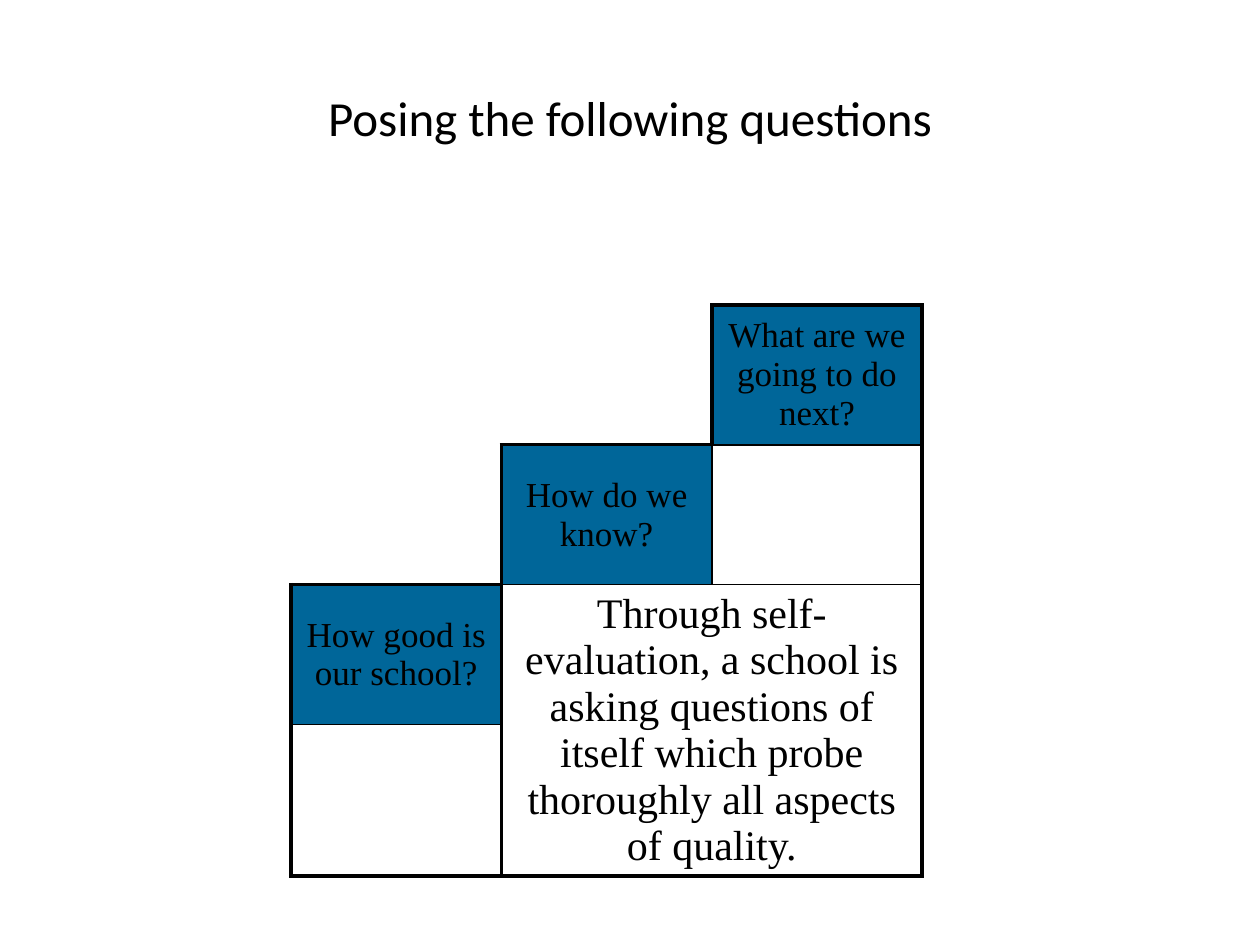
from lxml.etree import SubElement
from pptx import Presentation
from pptx.dml.color import RGBColor
from pptx.enum.text import MSO_ANCHOR, PP_ALIGN
from pptx.oxml.ns import qn
from pptx.util import Inches, Pt

HUES = {"ink": "000000", "step": "006699"}
TITLE = "Posing the following questions"
STEPS = {
    (0, 2): "What are we going to do next?",
    (1, 1): "How do we know?",
    (2, 0): "How good is our school?",
}
ANSWER = (
    "Through self-evaluation, a school is asking questions of itself "
    "which probe thoroughly all aspects of quality."
)
ROWS, COLS = 4, 3
WIDE, HIGH = 1.67, 1.11
THICK, THIN = 2.25, 1
UPRIGHT = [
    [0, 0, THICK, THICK],
    [0, THICK, THIN, THICK],
    [THICK, THICK, 0, THICK],
    [THICK, THICK, 0, THICK],
]
LEVEL = [
    [0, 0, THICK],
    [0, THICK, THIN],
    [THICK, THIN, THIN],
    [THIN, 0, 0],
    [THICK, THICK, THICK],
]


def color(name):
    return RGBColor.from_string(HUES[name])


def style(par, size, face):
    par.alignment = PP_ALIGN.CENTER
    par.font.size = Pt(size)
    par.font.name = face
    par.font.color.rgb = color("ink")


def write(cell, text, size):
    cell.text = text
    cell.vertical_anchor = MSO_ANCHOR.MIDDLE
    cell.margin_left = cell.margin_right = Inches(0.07)
    cell.margin_top = cell.margin_bottom = Inches(0.05)
    style(cell.text_frame.paragraphs[0], size, "Times New Roman")


def border(cell, row, col):
    origin = cell.is_merge_origin
    right = col + (cell.span_width if origin else 1)
    below = row + (cell.span_height if origin else 1)
    sides = {
        "L": UPRIGHT[row][col],
        "R": UPRIGHT[row][right],
        "T": LEVEL[row][col],
        "B": LEVEL[below][col],
    }
    props = cell._tc.get_or_add_tcPr()
    for spot, (side, weight) in enumerate(sides.items()):
        line = SubElement(props, qn(f"a:ln{side}"), w=str(Pt(weight)))
        if weight:
            fill = SubElement(line, qn("a:solidFill"))
            SubElement(fill, qn("a:srgbClr"), val=HUES["ink"])
        else:
            SubElement(line, qn("a:noFill"))
        props.insert(spot, line)


def main():
    """Build the slide with its staircase of questions."""
    deck = Presentation()
    deck.slide_width, deck.slide_height = Inches(10), Inches(7.5)
    slide = deck.slides.add_slide(deck.slide_layouts[5])

    title = slide.shapes.title
    title.left, title.top = Inches(0.5), Inches(0.3)
    title.width, title.height = Inches(9), Inches(1.25)
    title.text_frame.text = TITLE
    title.text_frame.vertical_anchor = MSO_ANCHOR.MIDDLE
    style(title.text_frame.paragraphs[0], 28, "Calibri")

    table = slide.shapes.add_table(
        ROWS, COLS, Inches(2.31), Inches(2.42),
        Inches(COLS * WIDE), Inches(ROWS * HIGH),
    ).table
    table.first_row = table.horz_banding = False
    table.cell(2, 1).merge(table.cell(3, 2))
    write(table.cell(2, 1), ANSWER, 24)

    for row in range(ROWS):
        for col in range(COLS):
            cell = table.cell(row, col)
            if (row, col) in STEPS:
                write(cell, STEPS[row, col], 20)
                cell.fill.solid()
                cell.fill.fore_color.rgb = color("step")
            else:
                cell.fill.background()
            border(cell, row, col)

    deck.save("out.pptx")


if __name__ == "__main__":
    main()
